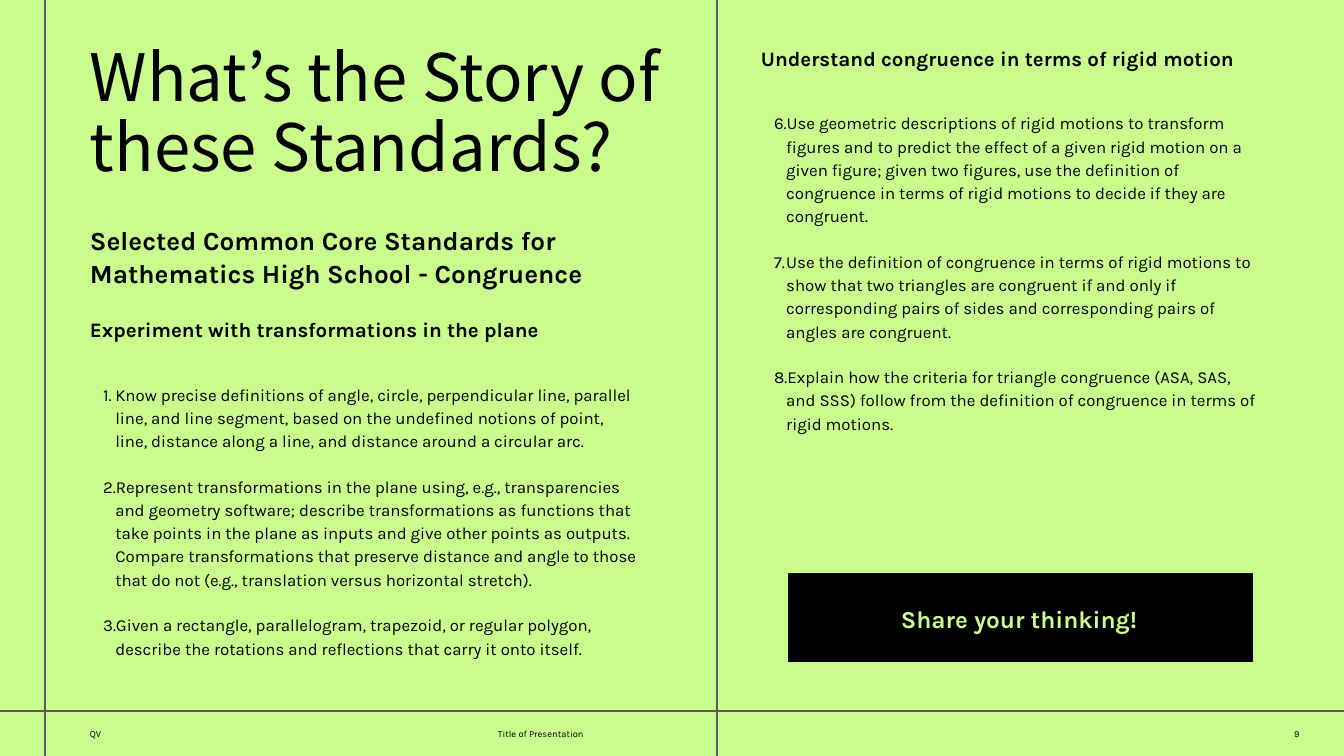
from dataclasses import dataclass

from lxml import etree
from pptx import Presentation
from pptx import util as u
from pptx.dml.color import RGBColor
from pptx.enum import shapes, text
from pptx.oxml.ns import qn

COLORS = {"lime": "C9FC8D", "ink": "000000", "rule": "595959"}
WIDTH, HEIGHT = 25.4, 14.29
LEFT, RIGHT, TOP = 1.7, 14.38, 0.85
FOOT_Y, FOOT_STEP = 13.44, 7.71


@dataclass
class Box:
    x: float
    y: float
    w: float
    h: float


@dataclass
class Rule:
    x1: float
    y1: float
    x2: float
    y2: float


@dataclass
class Standards:
    heading: str
    heading_box: Box
    list_box: Box
    start: int
    items: list[str]


RULES = [
    Rule(0, FOOT_Y, WIDTH, FOOT_Y),
    Rule(0.85, 0, 0.85, HEIGHT),
    Rule(13.55, 0, 13.55, HEIGHT),
]

FOOTERS = [("QV", "LEFT"), ("Title of Presentation", "LEFT"), ("9", "RIGHT")]

SECTIONS = [
    Standards(
        "Experiment with transformations in the plane",
        Box(LEFT, 5.97, 9.75, 0.48), Box(LEFT, 7.21, 10.36, 5.66), 1,
        [
            "Know precise definitions of angle, circle, perpendicular line, parallel line, "
            "and line segment, based on the undefined notions of point, line, distance along "
            "a line, and distance around a circular arc.",
            "Represent transformations in the plane using, e.g., transparencies and geometry "
            "software; describe transformations as functions that take points in the plane as "
            "inputs and give other points as outputs. Compare transformations that preserve "
            "distance and angle to those that do not (e.g., translation versus horizontal "
            "stretch).",
            "Given a rectangle, parallelogram, trapezoid, or regular polygon, describe the "
            "rotations and reflections that carry it onto itself.",
        ],
    ),
    Standards(
        "Understand congruence in terms of rigid motion",
        Box(RIGHT, TOP, 9.75, 0.48), Box(RIGHT, 2.08, 9.45, 6.1), 6,
        [
            "Use geometric descriptions of rigid motions to transform figures and to predict "
            "the effect of a given rigid motion on a given figure; given two figures, use the "
            "definition of congruence in terms of rigid motions to decide if they are "
            "congruent.",
            "Use the definition of congruence in terms of rigid motions to show that two "
            "triangles are congruent if and only if corresponding pairs of sides and "
            "corresponding pairs of angles are congruent.",
            "Explain how the criteria for triangle congruence (ASA, SAS, and SSS) follow from "
            "the definition of congruence in terms of rigid motions.",
        ],
    ),
]


def rgb(name: str) -> RGBColor:
    return RGBColor.from_string(COLORS[name])


def place(box: Box) -> tuple:
    return u.Cm(box.x), u.Cm(box.y), u.Cm(box.w), u.Cm(box.h)


def add_text(s, box: Box, *paragraphs: str, size: float, font="Karla", color="ink",
             bold=False, align="LEFT", anchor="TOP", spacing=1.0,
             insets=(0, 0, 0, 0), grow=True):
    sp = s.shapes.add_textbox(*place(box))
    tf = sp.text_frame
    tf.word_wrap = True
    tf.auto_size = text.MSO_AUTO_SIZE.SHAPE_TO_FIT_TEXT if grow else text.MSO_AUTO_SIZE.NONE
    tf.vertical_anchor = text.MSO_ANCHOR[anchor]
    tf.margin_left, tf.margin_top, tf.margin_right, tf.margin_bottom = map(u.Cm, insets)
    for i, content in enumerate(paragraphs):
        p = tf.add_paragraph() if i else tf.paragraphs[0]
        p.alignment = text.PP_ALIGN[align]
        p.line_spacing = spacing
        r = p.add_run()
        r.text = content
        r.font.name = font
        r.font.size = u.Pt(size)
        r.font.bold = bold
        r.font.color.rgb = rgb(color)
    return sp


def number_paragraphs(sp, start: int) -> None:
    paragraphs = sp.text_frame.paragraphs
    for p in paragraphs:
        p.space_before = u.Pt(12)
    paragraphs[-1].space_after = u.Pt(10)
    for p in paragraphs:
        props = p._p.get_or_add_pPr()
        props.set("marL", str(u.Cm(0.23)))
        props.set("indent", str(u.Cm(-0.38)))
        color = etree.SubElement(props, qn("a:buClr"))
        etree.SubElement(color, qn("a:srgbClr"), val=COLORS["ink"])
        etree.SubElement(props, qn("a:buFont"), typeface="Karla")
        etree.SubElement(props, qn("a:buAutoNum"), type="arabicPeriod", startAt=str(start))


def add_rule(s, rule: Rule) -> None:
    line = s.shapes.add_connector(shapes.MSO_CONNECTOR.STRAIGHT, u.Cm(rule.x1),
                                  u.Cm(rule.y1), u.Cm(rule.x2), u.Cm(rule.y2))
    line.line.color.rgb = rgb("rule")
    line.line.width = u.Pt(0.75)
    etree.SubElement(line._element.spPr, qn("a:effectLst"))


def add_standards(s, section: Standards) -> None:
    add_text(s, section.heading_box, section.heading, size=11, bold=True, spacing=1.05)
    sp = add_text(s, section.list_box, *section.items, size=9, spacing=1.15,
                  insets=(0.25, 0, 0, 0))
    number_paragraphs(sp, section.start)


def add_button(s, box: Box, label_box: Box, label: str) -> None:
    sp = s.shapes.add_shape(shapes.MSO_SHAPE.RECTANGLE, *place(box))
    sp.shadow.inherit = False
    sp.fill.solid()
    sp.fill.fore_color.rgb = rgb("ink")
    sp.line.color.rgb = rgb("ink")
    sp.line.width = u.Pt(0.75)
    add_text(s, label_box, label, size=13, bold=True, color="lime", align="CENTER",
             insets=(0.25, 0.25, 0.25, 0.25))


def main() -> None:
    prs = Presentation()
    prs.slide_width, prs.slide_height = u.Cm(WIDTH), u.Cm(HEIGHT)
    s = prs.slides.add_slide(prs.slide_layouts[6])
    s.background.fill.solid()
    s.background.fill.fore_color.rgb = rgb("lime")

    for rule in RULES:
        add_rule(s, rule)
    for i, (label, align) in enumerate(FOOTERS):
        add_text(s, Box(LEFT + i * FOOT_STEP, FOOT_Y, 7.44, 0.86), label, size=5,
                 align=align, anchor="MIDDLE", grow=False)

    add_text(s, Box(LEFT, TOP, 11.2, 2.69), "What’s the Story of these Standards?",
             size=35, font="Noto Sans CJK KR", spacing=0.9)
    add_text(s, Box(LEFT, 4.22, 11.2, 1.22),
             "Selected Common Core Standards for Mathematics High School - Congruence",
             size=14, bold=True, spacing=1.05)
    for section in SECTIONS:
        add_standards(s, section)
    add_button(s, Box(14.91, 10.85, 8.76, 1.65), Box(15.47, 11.18, 7.57, 1.07),
               "Share your thinking!")
    prs.save("out.pptx")


if __name__ == "__main__":
    main()
